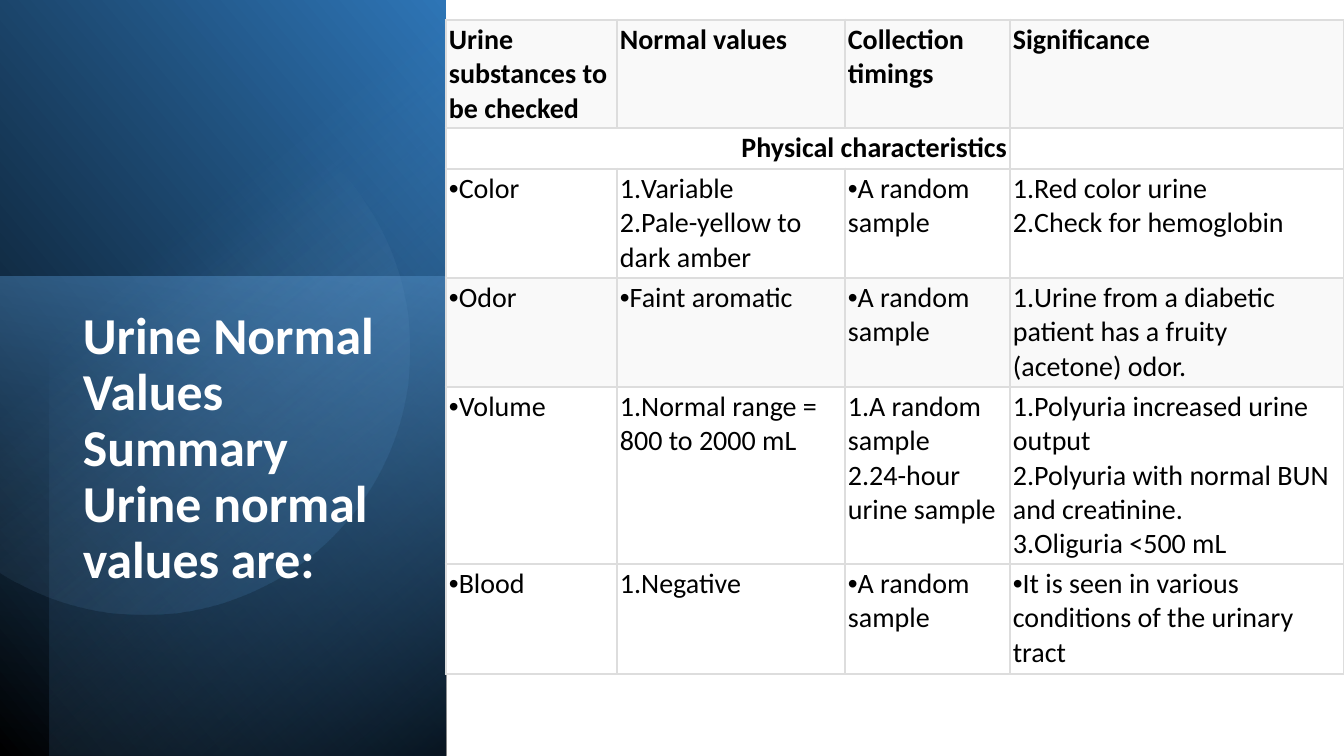
from math import acos, cos, pi, sin

from lxml.etree import SubElement
from pptx import Presentation
from pptx.dml.color import RGBColor
from pptx.enum.shapes import MSO_SHAPE
from pptx.enum.text import MSO_ANCHOR, PP_ALIGN
from pptx.oxml import parse_xml
from pptx.oxml.ns import nsdecls, qn
from pptx.util import Emu, Pt

PAGE_WIDTH, PAGE_HEIGHT = 1344, 756
SCALE = 12192000 / PAGE_WIDTH
FONT = "Calibri"
PANEL_WIDTH = 446

COLUMN_WIDTHS = [171, 228, 165, 334]
ROW_HEIGHTS = [108, 41, 109, 109, 177, 110]
SHADED_ROWS = (0, 3)
HEADINGS = ["Urine substances to be checked", "Normal values",
            "Collection timings", "Significance"]
SECTION = "Physical characteristics"
BULLET, NUMBER = "bullet", "number"
SAMPLE = (BULLET, ["A random sample"])
SUBSTANCES = [
    [(BULLET, ["Color"]),
     (NUMBER, ["Variable", "Pale-yellow to dark amber"]),
     SAMPLE,
     (NUMBER, ["Red color urine", "Check for hemoglobin"])],
    [(BULLET, ["Odor"]),
     (BULLET, ["Faint aromatic"]),
     SAMPLE,
     (NUMBER, ["Urine from a diabetic patient has a fruity (acetone) odor."])],
    [(BULLET, ["Volume"]),
     (NUMBER, ["Normal range = 800 to 2000 mL"]),
     (NUMBER, ["A random sample", "24-hour urine sample"]),
     (NUMBER, ["Polyuria increased urine output",
               "Polyuria with normal BUN and creatinine.",
               "Oliguria <500 mL"])],
    [(BULLET, ["Blood"]),
     (NUMBER, ["Negative"]),
     SAMPLE,
     (BULLET, ["It is seen in various conditions of the urinary tract"])],
]


def px(length):
    return Emu(round(length * SCALE))


def color(value):
    return RGBColor.from_string(value)


def style_paragraph(para, size, font_color, bold):
    for span in para.runs:
        span.font.name = FONT
        span.font.size = Pt(size)
        span.font.bold = bold
        span.font.color.rgb = color(font_color)


def fill_gradient(shape, stops, angle):
    """Each stop is (position %, colour, opacity %); the angle runs clockwise."""
    shape.shadow.inherit = False
    shape.line.fill.background()
    shape.fill.gradient()
    shape.fill.gradient_angle = 360 - angle
    for stop, (position, value, _) in zip(shape.fill.gradient_stops, stops):
        stop.position = position / 100
        stop.color.rgb = color(value)
    swatches = shape._element.spPr.iter(qn("a:srgbClr"))
    for swatch, (_, _, opacity) in zip(swatches, stops):
        if opacity < 100:
            SubElement(swatch, qn("a:alpha")).set("val", str(opacity * 1000))


def add_turned_layer(page, box, rotation, flipped, stops, angle):
    """A rectangle turned by a quarter so that it covers the box."""
    left, top, width, height = box
    shift = (width - height) / 2
    layer = page.shapes.add_shape(MSO_SHAPE.RECTANGLE, px(left + shift), px(top - shift),
                                  px(height), px(width))
    layer.rotation = rotation
    if flipped:
        layer._element.spPr.find(qn("a:xfrm")).set("flipH", "1")
    fill_gradient(layer, stops, angle)


def add_disc(page, left, center_x, center_y, radius):
    """A disc cut off straight at the left edge of the panel."""
    half_arc = pi - acos((center_x - left) / radius)
    steps = 120
    angles = [half_arc * (2 * step / steps - 1) for step in range(steps + 1)]
    points = [(px(center_x + radius * cos(a)), px(center_y + radius * sin(a)))
              for a in angles]
    builder = page.shapes.build_freeform(*points[0])
    builder.add_line_segments(points[1:], close=True)
    disc = builder.convert_to_shape()
    fill_gradient(disc, [(39, "9DC3E6", 0), (100, "2E75B6", 26)], 52)


def add_panel(page, left, top, width, height):
    # Blue background layers
    add_turned_layer(page, (left, top, width, height), 90, True,
                     [(0, "000000", 100), (100, "2E75B6", 100)], 310)
    add_turned_layer(page, (left, top + 276, width, height - 276), 270, False,
                     [(0, "5B9BD5", 50), (100, "1F4E79", 0)], 190)
    add_turned_layer(page, (left + 50, top, width - 50, height), 270, True,
                     [(0, "000000", 59), (69, "5B9BD5", 0)], 220)
    add_disc(page, left, left + 144, top + 350, 265)

    # Title
    title = page.shapes.add_textbox(px(left + 73), px(top + 305), px(318), px(339))
    frame = title.text_frame
    frame.word_wrap = True
    frame.vertical_anchor = MSO_ANCHOR.TOP
    frame.text = "Urine Normal Values Summary\nUrine normal values are:"
    for para in frame.paragraphs:
        para.line_spacing = 0.9
        style_paragraph(para, 37, "FFFFFF", True)


def set_marker(para, marker):
    properties = para._p.get_or_add_pPr()
    properties.set("marL", "0")
    properties.set("indent", "0")
    if marker == BULLET:
        SubElement(properties, qn("a:buFont")).set("typeface", "Arial")
        SubElement(properties, qn("a:buChar")).set("char", "•")
    else:
        SubElement(properties, qn("a:buAutoNum")).set("type", "arabicPeriod")


def format_cell(cell, fill_color):
    cell.margin_left = cell.margin_right = px(3)
    cell.margin_top = cell.margin_bottom = px(3)
    cell.fill.solid()
    cell.fill.fore_color.rgb = color(fill_color)
    properties = cell._tc.get_or_add_tcPr()
    for index, side in enumerate(("lnL", "lnR", "lnT", "lnB")):
        border = parse_xml(
            f'<a:{side} {nsdecls("a")} w="{Pt(2.25)}"><a:solidFill>'
            f'<a:srgbClr val="DDDDDD"/></a:solidFill></a:{side}>')
        properties.insert(index, border)


def write_cell(cell, lines, marker=None):
    cell.text_frame.text = "\n".join(lines)
    for para in cell.text_frame.paragraphs:
        if marker:
            set_marker(para, marker)
        style_paragraph(para, 20, "000000", marker is None)


def add_values_table(page, left, top):
    table = page.shapes.add_table(
        len(ROW_HEIGHTS), len(COLUMN_WIDTHS), px(left), px(top),
        px(sum(COLUMN_WIDTHS)), px(sum(ROW_HEIGHTS))).table
    table.first_row = table.horz_banding = False
    for column, width in zip(table.columns, COLUMN_WIDTHS):
        column.width = px(width)
    for row_index, (row, height) in enumerate(zip(table.rows, ROW_HEIGHTS)):
        row.height = px(height)
        for cell in row.cells:
            format_cell(cell, "F9F9F9" if row_index in SHADED_ROWS else "FFFFFF")

    # Header row
    for column_index, heading in enumerate(HEADINGS):
        write_cell(table.cell(0, column_index), [heading])

    # Section row, set right to left
    section = table.cell(1, 0)
    section.merge(table.cell(1, 2))
    write_cell(section, [SECTION])
    para = section.text_frame.paragraphs[0]
    para.alignment = PP_ALIGN.RIGHT
    para._p.get_or_add_pPr().set("rtl", "1")

    # Substance rows
    for row_index, substance in enumerate(SUBSTANCES, start=2):
        for column_index, (marker, lines) in enumerate(substance):
            write_cell(table.cell(row_index, column_index), lines, marker)


def main():
    deck = Presentation()
    deck.slide_width, deck.slide_height = px(PAGE_WIDTH), px(PAGE_HEIGHT)
    page = deck.slides.add_slide(deck.slide_layouts[6])
    add_panel(page, 0, 0, PANEL_WIDTH, PAGE_HEIGHT)
    add_values_table(page, PANEL_WIDTH, 20)
    deck.save("out.pptx")


if __name__ == "__main__":
    main()
